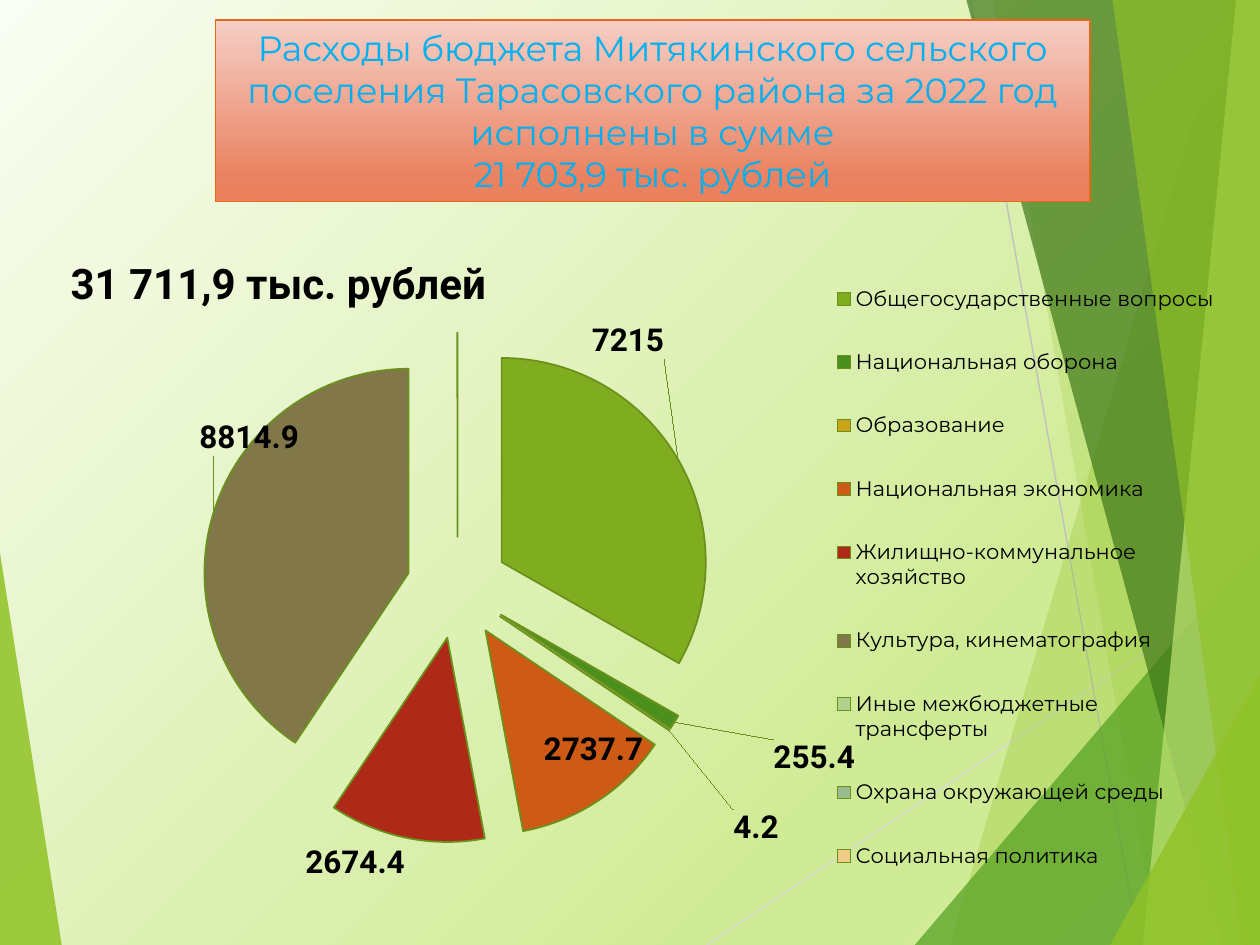
from typing import NamedTuple

from lxml.etree import SubElement as Sub
from pptx import Presentation
from pptx.chart.data import CategoryChartData as Data
from pptx.dml.color import RGBColor as RGB
from pptx.enum.chart import XL_CHART_TYPE as Kind, XL_LEGEND_POSITION as Side
from pptx.enum.shapes import MSO_CONNECTOR as Link, MSO_SHAPE as Form
from pptx.enum.text import MSO_ANCHOR as Anchor, PP_ALIGN as Align
from pptx.oxml import parse_xml
from pptx.oxml.ns import nsdecls, qn
from pptx.util import Inches, Pt

WIDE, HIGH = 10, 7.5  # the grid has one-inch columns and rows
FINE = 100  # freeform units to the inch
COLORS = {
    "lime": "90C226", "green": "54A021", "dark": "3F7819", "pale": "C0E474",
    "orange": "E76618", "sky": "00B0F0", "black": "000000",
    "mist": "D9D9D9", "gray": "BFBFBF", "edge": "6A911C",
}


class Facet(NamedTuple):
    points: tuple
    color: str
    alpha: int


class Ray(NamedTuple):
    start: tuple
    end: tuple
    color: str


class Slice(NamedTuple):
    name: str
    value: float | None
    color: str
    shift: tuple | None = None  # label offset in shares of the chart


def right(top: float, foot: float, color: str, alpha: int) -> Facet:
    """Facet between a slanted edge and the right side of the slide."""
    return Facet(((top, 0), (foot, HIGH), (WIDE, HIGH), (WIDE, 0)), color, alpha)


def corner(foot: float, rise: float, color: str, alpha: int) -> Facet:
    """Triangle in the lower right corner."""
    return Facet(((foot, HIGH), (WIDE, rise), (WIDE, HIGH)), color, alpha)


DECOR = [
    Facet(((0, 4.39), (0.49, HIGH), (0, HIGH)), "lime", 85),
    Ray((5.61, HIGH), (WIDE, 4.57), "mist"),
    Ray((7.7, 0), (9.04, HIGH), "gray"),
    right(9.75, 7.54, "lime", 30),
    right(7.88, 9.19, "lime", 20),
    corner(7.26, 4.29, "green", 72),
    right(7.67, 9.7, "dark", 70),
    right(9.81, 9.07, "pale", 70),
    right(8.83, 9.86, "lime", 65),
    corner(8.81, 5.35, "lime", 80),
]
SLICES = [
    Slice("Общегосударственные вопросы", 7215, "80AC20", (-0.08, -0.14)),
    Slice("Национальная оборона", 255.4, "4B8F1D", (0.08, 0.02)),
    Slice("Образование", 4.2, "CCA41A", (0.05, 0.11)),
    Slice("Национальная экономика", 2737.7, "CE5B15", (-0.05, -0.11)),
    Slice("Жилищно-коммунальное хозяйство", 2674.4, "AE2918", (0, 0)),
    Slice("Культура, кинематография", 8814.9, "817748", (0.08, -0.08)),
    Slice("Иные межбюджетные трансферты", 2.3, "B0D28C"),
    Slice("Охрана окружающей среды", None, "96BC90"),
    Slice("Социальная политика", None, "F0CC88"),
]


def tint(name: str) -> RGB:
    return RGB.from_string(COLORS[name])


def style(font, **values) -> None:
    color = values.pop("color", None)
    for key, value in values.items():
        setattr(font, key, value)
    if color:
        font.color.rgb = tint(color)


def stroke(line, color: str, width: float) -> None:
    line.color.rgb = tint(color)
    line.width = Pt(width)


def grade(fill, root, stops: list, angle: int) -> None:
    """Gradient with any number of stops, turned clockwise."""
    fill.gradient()
    fill.gradient_angle = -angle % 360
    bar = root.find(".//" + qn("a:gsLst"))
    for old in list(bar):
        bar.remove(old)
    for place, color in stops:
        stop = Sub(bar, qn("a:gs"), pos=str(place * 1000))
        Sub(stop, qn("a:srgbClr"), val=color)


def draw_facet(shapes, item: Facet) -> None:
    first, *rest = [(x * FINE, y * FINE) for x, y in item.points]
    pen = shapes.build_freeform(*first, scale=Inches(1) / FINE)
    pen.add_line_segments(rest, close=True)
    shape = pen.convert_to_shape()
    shape.shadow.inherit = False
    shape.line.fill.background()
    shape.fill.solid()
    shape.fill.fore_color.rgb = tint(item.color)
    paint = shape._element.spPr.find(".//" + qn("a:srgbClr"))
    Sub(paint, qn("a:alpha"), val=str(item.alpha * 1000))


def draw_ray(shapes, item: Ray) -> None:
    ends = [Inches(n) for n in item.start + item.end]
    line = shapes.add_connector(Link.STRAIGHT, *ends)
    stroke(line.line, item.color, 0.75)
    Sub(line._element.spPr, qn("a:effectLst"))


def draw_title(shapes) -> None:
    box = shapes.add_shape(Form.RECTANGLE, *map(Inches, (1.71, 0.16, 6.94, 1.44)))
    box.shadow.inherit = False
    grade(box.fill, box._element.spPr, [(0, "F5CEC5"), (88, "EA815F"), (100, "EA815F")], 90)
    stroke(box.line, "orange", 1)
    frame = box.text_frame
    frame.word_wrap = True
    frame.vertical_anchor = Anchor.MIDDLE
    frame.text = ("Расходы бюджета Митякинского сельского поселения Тарасовского "
                  "района за 2022 год исполнены в сумме\v21 703,9 тыс. рублей")
    para = frame.paragraphs[0]
    para.alignment = Align.CENTER
    for run in para.runs:
        style(run.font, size=Pt(20), name="Montserrat", color="sky")


def layout(tail: str = "", **parts: float) -> str:
    """Manual layout; modes come before the sizes they govern."""
    marks = "".join(f'<c:{k}Mode val="edge"/>' for k in "xy" if tail)
    sizes = "".join(f'<c:{k} val="{v}"/>' for k, v in parts.items())
    target = '<c:layoutTarget val="inner"/>' if tail == "inner" else ""
    return (f"<c:layout {nsdecls('c')}><c:manualLayout>{target}{marks}{sizes}"
            "</c:manualLayout></c:layout>")


def place(host, after: str | None, xml: str) -> None:
    """Swap in a layout, after the named child or first."""
    for old in host.findall(qn("c:layout")):
        host.remove(old)
    spot = 0 if after is None else host.index(host.find(qn(after))) + 1
    host.insert(spot, parse_xml(xml))


def flags(value: int) -> str:
    names = ("LegendKey", "Val", "CatName", "SerName", "Percent", "BubbleSize")
    return "".join(f'<c:show{n} val="{value if n == "Val" else 0}"/>' for n in names)


def add_labels(series) -> None:
    xml = f"<c:dLbls {nsdecls('c')}>"
    for i, item in enumerate(SLICES):
        if item.shift:
            x, y = item.shift
            spot = layout(x=x, y=y) if any(item.shift) else ""
            xml += (f'<c:dLbl><c:idx val="{i}"/>{spot}'
                    f'<c:dLblPos val="outEnd"/>{flags(1)}</c:dLbl>')
    xml += flags(0) + '<c:showLeaderLines val="1"/></c:dLbls>'
    ser = series._element
    ser.find(qn("c:cat")).addprevious(parse_xml(xml))
    style(series.data_labels.font, size=Pt(18), bold=True, name="Roboto", color="black")


def draw_chart(shapes) -> None:
    data = Data()
    data.categories = [s.name for s in SLICES]
    data.add_series("Series 1", [s.value for s in SLICES])
    area = map(Inches, (0.5, 1.75, 9.21, 5.45))
    chart = shapes.add_chart(Kind.PIE, *area, data).chart
    style(chart.font, size=Pt(18), name="Roboto", color="black")
    plot = chart.plots[0]
    plot.vary_by_categories = True
    series = plot.series[0]
    blast = parse_xml(f'<c:explosion {nsdecls("c")} val="25"/>')
    series._element.find(qn("c:tx")).addnext(blast)
    stroke(series.format.line, "edge", 1)
    for i, item in enumerate(SLICES):
        look = series.points[i].format
        look.fill.solid()
        look.fill.fore_color.rgb = RGB.from_string(item.color)
        stroke(look.line, "edge", 1)
    add_labels(series)

    chart.has_title = True
    title = chart.chart_title
    title.text_frame.text = "31 711,9 тыс. рублей"
    run = title.text_frame.paragraphs[0].runs[0]
    style(run.font, size=Pt(24), bold=True, name="Roboto", color="black")
    title.include_in_layout = False
    chart.has_legend = True
    legend = chart.legend
    legend.position = Side.RIGHT
    legend.include_in_layout = False
    style(legend.font, size=Pt(12), name="Montserrat", color="black")
    place(title._element, "c:tx", layout("edge", x=0, y=0.04))
    place(legend._element, "c:legendPos", layout("edge", x=0.66, y=0.04, w=0.34, h=0.96))
    zone = chart._chartSpace.find(".//" + qn("c:plotArea"))
    place(zone, None, layout("inner", x=0.12, y=0.16, w=0.44, h=0.75))


def main() -> None:
    deck = Presentation()
    deck.slide_width, deck.slide_height = Inches(WIDE), Inches(HIGH)
    slide = deck.slides.add_slide(deck.slide_layouts[6])
    stops = [(0, "FAFDF3"), (74, "D0EB96"), (83, "D0EB96"), (100, "DFF1B9")]
    grade(slide.background.fill, slide._element, stops, 45)
    for item in DECOR:
        draw = draw_facet if isinstance(item, Facet) else draw_ray
        draw(slide.shapes, item)
    draw_title(slide.shapes)
    draw_chart(slide.shapes)
    deck.save("out.pptx")


if __name__ == "__main__":
    main()
